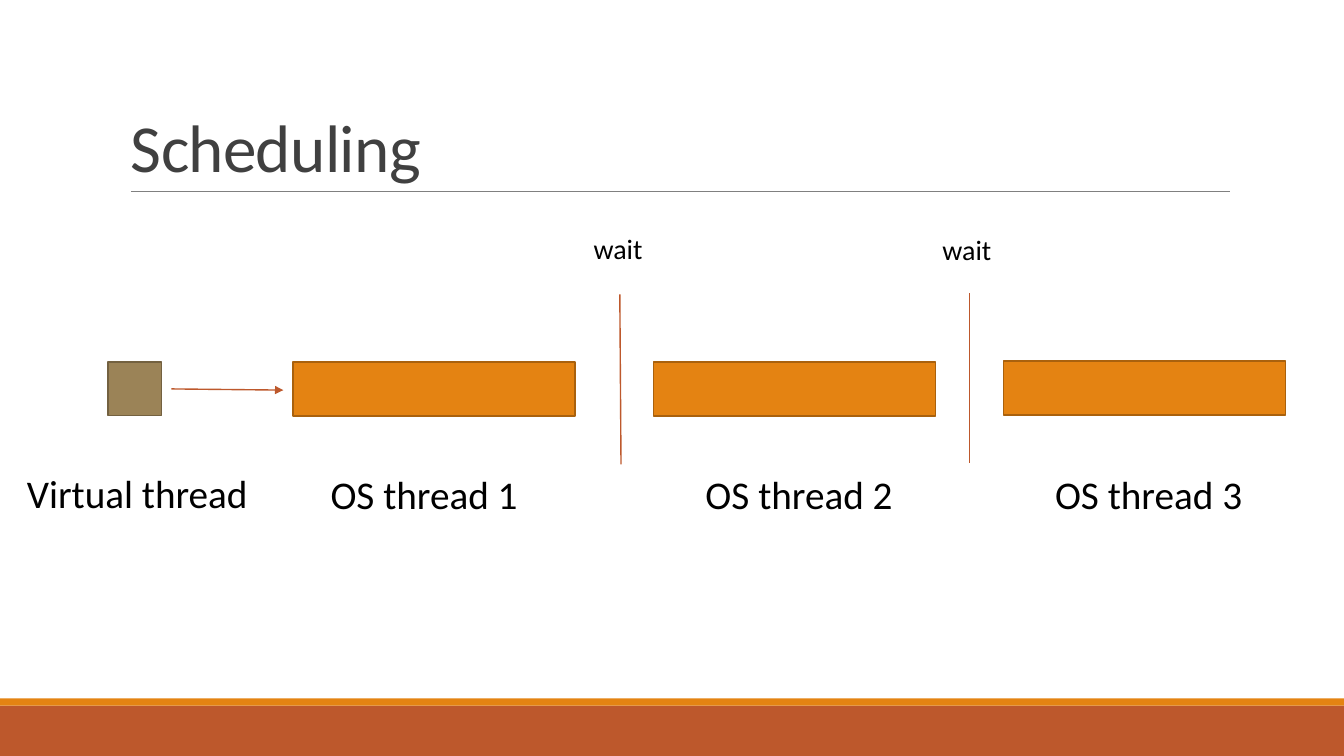
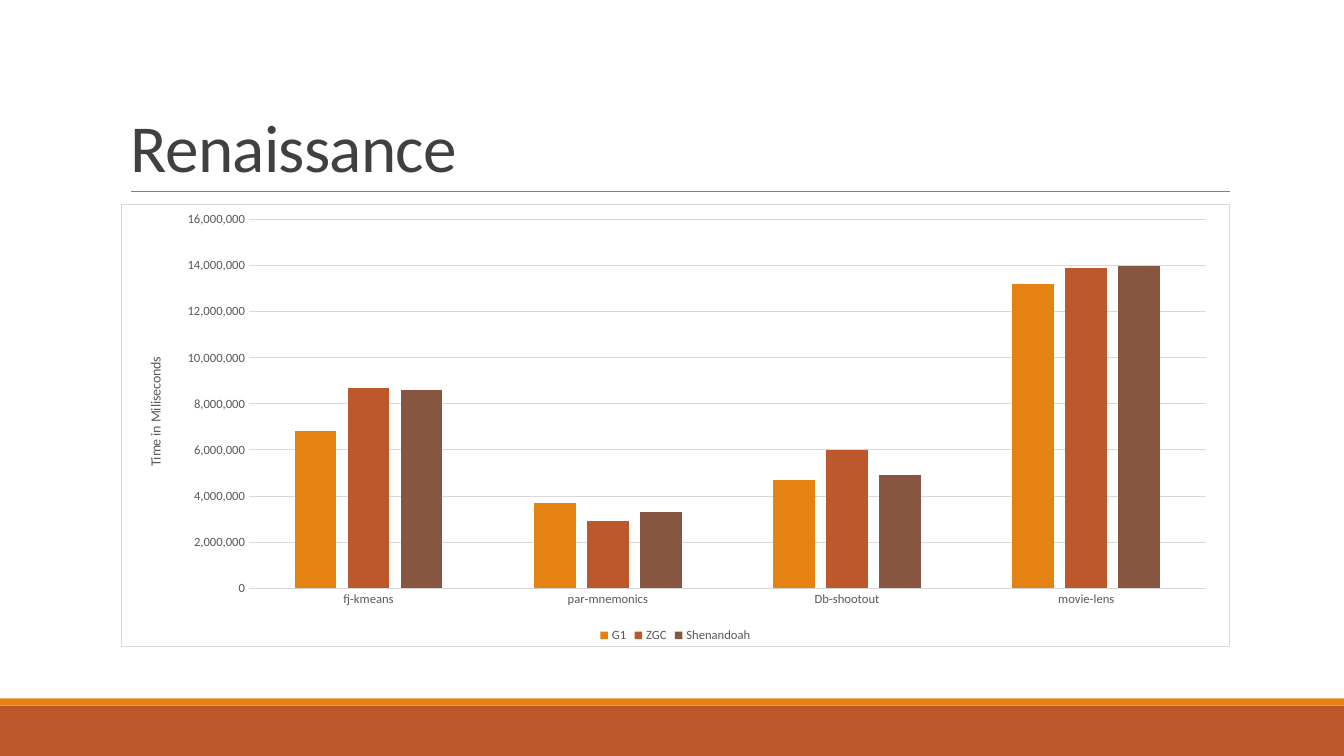
"""Builds two slides: thread scheduling and a benchmark chart."""
from dataclasses import dataclass
from typing import Any

from pptx import Presentation
from pptx.chart.data import CategoryChartData
from pptx.dml.color import RGBColor
from pptx.enum.chart import XL_CHART_TYPE, XL_LEGEND_POSITION, XL_TICK_MARK
from pptx.enum.shapes import MSO_CONNECTOR, MSO_SHAPE
from pptx.enum.text import MSO_ANCHOR, MSO_AUTO_SIZE
from pptx.oxml import parse_xml
from pptx.oxml.ns import nsdecls, qn
from pptx.util import Cm, Pt

RECT = MSO_SHAPE.RECTANGLE
STRAIGHT = MSO_CONNECTOR.STRAIGHT
COLUMNS = XL_CHART_TYPE.COLUMN_CLUSTERED
LEGEND_BOTTOM = XL_LEGEND_POSITION.BOTTOM
NO_TICK = XL_TICK_MARK.NONE
TOP, BOTTOM = MSO_ANCHOR.TOP, MSO_ANCHOR.BOTTOM
GROW = MSO_AUTO_SIZE.SHAPE_TO_FIT_TEXT

FONT = "Calibri"
COLORS = {
    "orange": "E48312", "orange_edge": "A9610D", "rust": "BD582C",
    "brown": "865640", "tan": "9B8357", "tan_edge": "736140",
    "title": "404040", "rule": "808080", "text": "000000",
    "chart_text": "595959", "grid": "D9D9D9", "white": "FFFFFF",
}
WIDTH, HEIGHT = 33.87, 19.05
BAR_WIDTH, BAR_HEIGHT = 7.11, 1.35
LABEL_WIDTH, LABEL_HEIGHT = 6.4, 1.45
WAIT_WIDTH, WAIT_HEIGHT = 1.88, 1.12


@dataclass(frozen=True)
class Box:
    """A filled rectangle, in centimetres."""
    left: float
    top: float
    width: float
    height: float
    fill: str
    edge: str = ""


@dataclass(frozen=True)
class Rule:
    """A straight line, in centimetres."""
    x1: float
    y1: float
    x2: float
    y2: float
    color: str = "rust"
    weight: float = 1
    arrow: bool = False


@dataclass(frozen=True)
class Label:
    """A text box, in centimetres."""
    text: str
    left: float
    top: float
    width: float = LABEL_WIDTH
    height: float = LABEL_HEIGHT
    size: int = 28


@dataclass(frozen=True)
class Series:
    """One named series of chart values."""
    name: str
    values: tuple[int, ...]
    color: str


BANDS = (
    Box(0, 17.78, WIDTH, 1.27, "rust"),
    Box(0, 17.6, WIDTH, 0.18, "orange"),
)
TITLE_RULE = Rule(3.3, 4.83, 30.99, 4.83, "rule", 0.5)
BOXES = (
    *(Box(x, y, BAR_WIDTH, BAR_HEIGHT, "orange", "orange_edge")
      for x, y in ((7.38, 9.13), (16.47, 9.13), (25.29, 9.1))),
    Box(2.72, 9.12, BAR_HEIGHT, BAR_HEIGHT, "tan", "tan_edge"),
)
RULES = (
    Rule(15.62, 7.42, 15.65, 11.7),
    Rule(24.43, 7.39, 24.43, 11.66),
    Rule(4.32, 9.8, 7.14, 9.83, arrow=True),
)
LABELS = (
    Label("Virtual thread", 0.43, 11.7),
    *(Label(f"OS thread {n}", x, 11.73)
      for n, x in enumerate((8.08, 17.53, 26.34), 1)),
    *(Label("wait", x, y, WAIT_WIDTH, WAIT_HEIGHT, 20)
      for x, y in ((14.71, 5.72), (23.5, 5.74))),
)
CATEGORIES = ("fj-kmeans", "par-mnemonics", "Db-shootout", "movie-lens")
SERIES = (
    Series("G1", (6800000, 3700000, 4700000, 13200000), "orange"),
    Series("ZGC", (8700000, 2900000, 6000000, 13900000), "rust"),
    Series("Shenandoah", (8600000, 3300000, 4900000, 14000000), "brown"),
)


def rgb(name: str) -> RGBColor:
    """Look up a named colour."""
    return RGBColor.from_string(COLORS[name])


def apply(target: Any, formats: dict[str, Any]) -> None:
    """Set each format value on the target."""
    for name, value in formats.items():
        setattr(target, name, value)


def style_font(font: Any, size: float, color: str) -> None:
    """Give a font the deck's face with a size and colour."""
    apply(font, {"name": FONT, "size": Pt(size), "bold": False})
    font.color.rgb = rgb(color)


def style_line(line: Any, color: str, weight: float) -> None:
    """Give a line a solid colour and weight."""
    line.color.rgb = rgb(color)
    line.width = Pt(weight)


def add_box(s: Any, box: Box) -> None:
    """Draw a rectangle."""
    sp = s.shapes.add_shape(RECT, Cm(box.left), Cm(box.top),
                            Cm(box.width), Cm(box.height))
    sp.shadow.inherit = False
    sp.fill.solid()
    sp.fill.fore_color.rgb = rgb(box.fill)
    if box.edge:
        style_line(sp.line, box.edge, 1.25)
    else:
        sp.line.fill.background()


def add_rule(s: Any, rule: Rule) -> None:
    """Draw a line, with an arrowhead if asked."""
    line = s.shapes.add_connector(STRAIGHT, Cm(rule.x1), Cm(rule.y1),
                                  Cm(rule.x2), Cm(rule.y2))
    style_line(line.line, rule.color, rule.weight)
    props = line._element.spPr
    if rule.arrow:
        props.find(qn("a:ln")).append(
            parse_xml(f'<a:tailEnd {nsdecls("a")} type="triangle"/>'))
    props.append(parse_xml(f'<a:effectLst {nsdecls("a")}/>'))


def add_text(s: Any, label: Label, color: str = "text",
             **formats: Any) -> tuple[Any, Any]:
    """Write a text box and return its paragraph and run."""
    sp = s.shapes.add_textbox(Cm(label.left), Cm(label.top),
                              Cm(label.width), Cm(label.height))
    apply(sp.text_frame, {"word_wrap": True, "vertical_anchor": TOP} | formats)
    p = sp.text_frame.paragraphs[0]
    r = p.add_run()
    r.text = label.text
    style_font(r.font, label.size, color)
    return p, r


def add_slide(prs: Any, title: str) -> Any:
    """Add a blank slide with the shared bands, rule and title."""
    s = prs.slides.add_slide(prs.slide_layouts[6])
    for band in BANDS:
        add_box(s, band)
    add_rule(s, TITLE_RULE)
    p, r = add_text(s, Label(title, 3.05, 0.79, 27.94, 4.04, 48), "title",
                    vertical_anchor=BOTTOM)
    p.line_spacing = 0.85
    r._r.get_or_add_rPr().set("spc", "-50")
    return s


def set_layout(parent: Any, index: int, inner: bool,
               **fractions: float) -> None:
    """Place a chart part by fractions of the chart area."""
    old = parent.find(qn("c:layout"))
    if old is not None:
        parent.remove(old)
    target = '<c:layoutTarget val="inner"/>' if inner else ""
    modes = "".join(f'<c:{k}Mode val="edge"/>' for k in "xy")
    sizes = "".join(f'<c:{k} val="{v}"/>' for k, v in fractions.items())
    parent.insert(index, parse_xml(
        f'<c:layout {nsdecls("c")}><c:manualLayout>{target}{modes}{sizes}'
        '</c:manualLayout></c:layout>'))


def style_axes(chart: Any) -> None:
    """Format both axes, the gridlines and the value title."""
    for axis in (chart.category_axis, chart.value_axis):
        apply(axis, {"major_tick_mark": NO_TICK, "minor_tick_mark": NO_TICK})
        style_font(axis.tick_labels.font, 9, "chart_text")
    style_line(chart.category_axis.format.line, "grid", 0.75)
    axis = chart.value_axis
    apply(axis, {"minimum_scale": 0, "maximum_scale": 16000000,
                 "major_unit": 2000000})
    apply(axis.tick_labels, {"number_format": "#,##0",
                             "number_format_is_linked": False})
    axis.format.line.fill.background()
    style_line(axis.major_gridlines.format.line, "grid", 0.75)
    tf = axis.axis_title.text_frame
    r = tf.paragraphs[0].add_run()
    r.text = "Time in Miliseconds"
    style_font(r.font, 10, "chart_text")
    tf._txBody.bodyPr.set("rot", "-5400000")
    set_layout(axis.axis_title._element, 1, False, x=0.02, y=0.34)


def add_benchmark_chart(s: Any) -> None:
    """Draw the clustered column chart."""
    data = CategoryChartData(number_format="#,##0")
    data.categories = CATEGORIES
    for item in SERIES:
        data.add_series(item.name, item.values)
    chart = s.shapes.add_chart(COLUMNS, Cm(3.05), Cm(5.13),
                               Cm(27.94), Cm(11.18), data).chart
    style_font(chart.font, 10, "text")
    apply(chart, {"has_title": False, "has_legend": True})
    apply(chart.legend, {"position": LEGEND_BOTTOM,
                         "include_in_layout": False})
    style_font(chart.legend.font, 9, "chart_text")
    plot = chart.plots[0]
    apply(plot, {"gap_width": 219, "overlap": -27, "vary_by_categories": False})
    for series, item in zip(plot.series, SERIES):
        series.format.fill.solid()
        series.format.fill.fore_color.rgb = rgb(item.color)
    style_axes(chart)
    root = chart._chartSpace.find(qn("c:chart"))
    set_layout(root.find(qn("c:plotArea")), 0, True,
               x=0.115, y=0.035, w=0.864, h=0.833)
    fill, edge = (f'<a:solidFill><a:srgbClr val="{COLORS[c]}"/></a:solidFill>'
                  for c in ("white", "grid"))
    root.addnext(parse_xml(
        f'<c:spPr {nsdecls("c", "a")}>{fill}'
        f'<a:ln w="{Pt(0.75)}">{edge}</a:ln></c:spPr>'))


def main() -> None:
    """Build and save the deck."""
    prs = Presentation()
    apply(prs, {"slide_width": Cm(WIDTH), "slide_height": Cm(HEIGHT)})
    s = add_slide(prs, "Scheduling")
    for box in BOXES:
        add_box(s, box)
    for rule in RULES:
        add_rule(s, rule)
    for label in LABELS:
        add_text(s, label, auto_size=GROW)
    add_benchmark_chart(add_slide(prs, "Renaissance"))
    prs.save("out.pptx")


if __name__ == "__main__":
    main()
